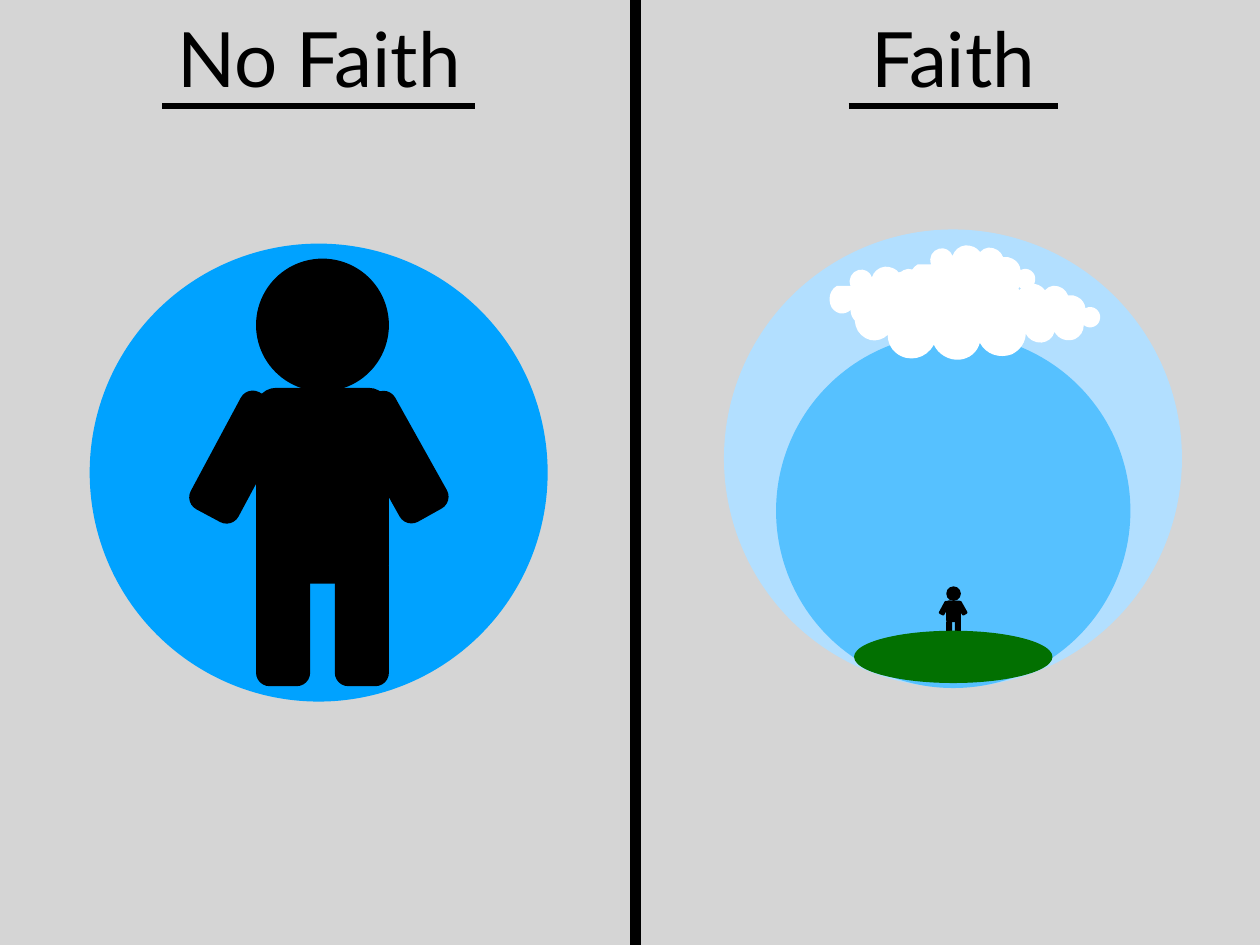
"""Build a two-panel slide that contrasts no faith with faith."""
from lxml.etree import SubElement
from pptx import Presentation
from pptx.dml.color import RGBColor
from pptx.enum.shapes import MSO_CONNECTOR, MSO_SHAPE
from pptx.enum.text import MSO_ANCHOR, MSO_AUTO_SIZE, PP_ALIGN
from pptx.oxml.ns import qn
from pptx.util import Pt


def paint(fill, color):
    fill.solid()
    fill.fore_color.rgb = RGBColor.from_string(color)


def add_part(kind, x, y, w, h, color, adj=None, rot=0):
    sp = s.shapes.add_shape(kind, Pt(x), Pt(y), Pt(w), Pt(h))
    sp.shadow.inherit = False
    sp.line.fill.background()
    sp.rotation = rot
    if adj is not None:
        sp.adjustments[0] = adj
    paint(sp.fill, color)
    return sp


OVAL, ROUND = MSO_SHAPE.OVAL, MSO_SHAPE.ROUNDED_RECTANGLE
BLACK, WHITE = "000000", "FFFFFF"

prs = Presentation()
prs.slide_width, prs.slide_height = Pt(1024), Pt(768)
s = prs.slides.add_slide(prs.slide_layouts[4])

headings = {1: ("No Faith", 31), 3: ("Faith", 546.5)}
for ph in list(s.placeholders):
    idx = ph.placeholder_format.idx
    if idx not in headings:
        ph.element.getparent().remove(ph.element)
        continue
    text, x = headings[idx]
    ph.left, ph.top, ph.width, ph.height = Pt(x), Pt(0.5), Pt(456.5), Pt(92)
    tf = ph.text_frame
    frame_format = {
        "vertical_anchor": MSO_ANCHOR.MIDDLE, "auto_size": MSO_AUTO_SIZE.NONE, "word_wrap": True,
        "margin_left": Pt(4), "margin_right": Pt(4), "margin_top": Pt(4), "margin_bottom": Pt(4),
    }
    for name, value in frame_format.items():
        setattr(tf, name, value)
    p = tf.paragraphs[0]
    p.alignment, p.space_before = PP_ALIGN.CENTER, Pt(0)
    r = p.add_run()
    r.text = text
    for name, value in {"name": "Lato", "size": Pt(62), "bold": False}.items():
        setattr(r.font, name, value)
    paint(r.font.fill, BLACK)

backdrop = add_part(MSO_SHAPE.RECTANGLE, 0, -2, 1024, 772, "D5D5D5")
backdrop.element.getparent().insert(2, backdrop.element)

circles = [
    (72.9, 198, 372.2, "00A2FF"),
    (588.4, 186.5, 372.2, "B2DFFF"),
    (630.7, 271.2, 288, "56C1FF"),
]
for x, y, size, color in circles:
    add_part(OVAL, x, y, size, size, color)

body_parts = [
    (OVAL, 0, 0, 108, 108, None, 0),
    (ROUND, 0, 105, 108, 159, 0.15, 0),
    (ROUND, 0, 239.5, 44, 108, 0.25, 0),
    (ROUND, 64, 239.5, 44, 108, 0.25, 0),
    (ROUND, -35.3, 107.3, 44, 108, 0.25, 28.2),
    (ROUND, 92.9, 107.3, 44, 108, 0.25, 330.8),
]
for left, top, k in [(208.1, 210.2, 1), (769, 476.5, 0.11)]:
    for kind, x, y, w, h, adj, rot in body_parts:
        add_part(kind, left + x * k, top + y * k, w * k, h * k, BLACK, adj, rot)

add_part(OVAL, 694.1, 512.6, 161.3, 42.5, "027001")

cloud_start = (2, 67)
cloud_edges = [
    (4, 75, 11, 81, 19, 83), (26, 84, 33, 82, 38, 77),
    (38, 85, 41, 92, 47, 97), (61, 109, 82, 104, 90, 88),
    (95, 99, 107, 106, 119, 105), (130, 104, 139, 97, 142, 86),
    (149, 99, 164, 104, 178, 99), (188, 94, 194, 85, 194, 74),
    (205, 83, 222, 76, 223, 62), (225, 48, 210, 37, 197, 44),
    (196, 35, 191, 28, 183, 24), (178, 21, 172, 20, 166, 21),
    (162, 10, 152, 4, 140, 4), (134, 5, 129, 7, 125, 12),
    (119, 3, 109, 0, 99, 0), (88, 1, 79, 9, 76, 19),
    (73, 9, 62, 3, 52, 6), (40, 9, 33, 22, 38, 34),
    (14, 34), (10, 36, 6, 40, 4, 44), (0, 51, 0, 60, 2, 67),
]
clouds = [(694.1, 216.7, 161.3), (673.9, 216.7, 102.4), (792.1, 230.4, 102.4), (739.4, 199.4, 102.4)]
for left, top, width in clouds:
    builder = s.shapes.build_freeform(*cloud_start, scale=Pt(1))
    builder.add_line_segments([edge[-2:] for edge in cloud_edges], close=True)
    sp = builder.convert_to_shape()
    sp.left, sp.top, sp.width, sp.height = Pt(left), Pt(top), Pt(width), Pt(width * 105 / 224)
    outline = sp.element.find(".//" + qn("a:path"))
    for child in list(outline):
        outline.remove(child)
    outline.set("w", "22400")
    outline.set("h", "10500")
    for edge in [cloud_start, *cloud_edges]:
        tag = "a:moveTo" if edge is cloud_start else "a:lnTo" if len(edge) == 2 else "a:cubicBezTo"
        segment = SubElement(outline, qn(tag))
        for x, y in zip(edge[::2], edge[1::2]):
            SubElement(segment, qn("a:pt"), x=str(x * 100), y=str(y * 100))
    SubElement(outline, qn("a:close"))
    sp.shadow.inherit = False
    sp.line.fill.background()
    paint(sp.fill, WHITE)

rules = [
    (516.7, 0, 516.7, 768, 9),
    (131.8, 86.4, 386.4, 86.4, 5),
    (689.6, 86.4, 859.7, 86.4, 5),
]
for x1, y1, x2, y2, weight in rules:
    ln = s.shapes.add_connector(MSO_CONNECTOR.STRAIGHT, Pt(x1), Pt(y1), Pt(x2), Pt(y2))
    ln.line.width = Pt(weight)
    paint(ln.line.fill, BLACK)
    SubElement(ln.element.spPr, qn("a:effectLst"))

prs.save("out.pptx")
